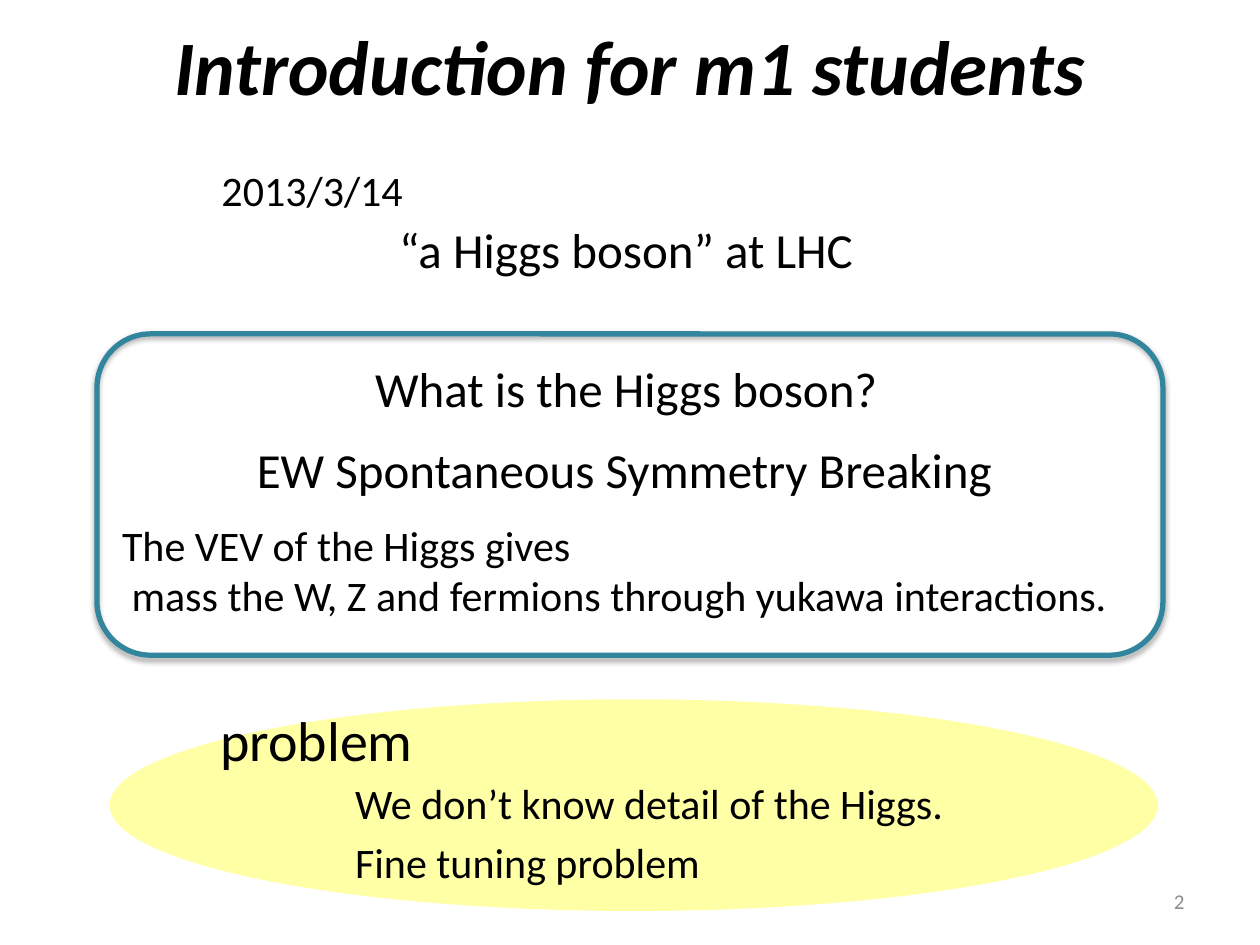
import dataclasses

import lxml.etree
import pptx
import pptx.dml.color
import pptx.enum.shapes
import pptx.enum.text
import pptx.oxml.ns
import pptx.util

ALIGN = pptx.enum.text.PP_ALIGN
ANCHOR = pptx.enum.text.MSO_ANCHOR
SHAPE = pptx.enum.shapes.MSO_SHAPE
COLUMNS, ROWS = 100, 75


@dataclasses.dataclass(frozen=True)
class Theme:
    font: str = "Calibri"
    ink: str = "000000"
    muted: str = "8C8C8C"
    frame: str = "31859C"
    highlight: str = "FFFF00"
    title: int = 44
    heading: int = 32
    statement: int = 28
    body: int = 24
    number: int = 12


THEME = Theme()


def rgb(value):
    return pptx.dml.color.RGBColor.from_string(value)


def grid_box(prs, column, row, columns, rows):
    dx, dy = prs.slide_width / COLUMNS, prs.slide_height / ROWS
    return [round(n) for n in (column * dx, row * dy, columns * dx, rows * dy)]


def style_text(tf, size, color=THEME.ink, align=ALIGN.LEFT, emphasis=None):
    for p in tf.paragraphs:
        p.alignment = align
        for r in p.runs:
            r.font.name = THEME.font
            r.font.size = pptx.util.Pt(size)
            r.font.color.rgb = rgb(color)
            r.font.bold = r.font.italic = emphasis


def set_title(prs, s, text, box):
    title = s.shapes.title
    title.left, title.top, title.width, title.height = grid_box(prs, *box)
    tf = title.text_frame
    tf.text = text
    tf.vertical_anchor = ANCHOR.MIDDLE
    style_text(tf, THEME.title, align=ALIGN.CENTER, emphasis=True)


def add_label(prs, s, text, size, box):
    tf = s.shapes.add_textbox(*grid_box(prs, *box)).text_frame
    tf.text = text
    tf.word_wrap = False
    tf.auto_size = pptx.enum.text.MSO_AUTO_SIZE.SHAPE_TO_FIT_TEXT
    style_text(tf, size)


def add_page_number(prs, s, text, box):
    tf = s.shapes.add_textbox(*grid_box(prs, *box)).text_frame
    tf.text = text
    tf.word_wrap = True
    tf.vertical_anchor = ANCHOR.MIDDLE
    style_text(tf, THEME.number, THEME.muted, ALIGN.RIGHT)


def add_highlight(prs, s, box, opacity):
    sp = s.shapes.add_shape(SHAPE.OVAL, *grid_box(prs, *box))
    sp.shadow.inherit = False
    sp.line.fill.background()
    sp.fill.solid()
    sp.fill.fore_color.rgb = rgb(THEME.highlight)
    color = sp.fill._xPr.find(".//" + pptx.oxml.ns.qn("a:srgbClr"))
    add_child(color, "alpha", val=opacity * 1000)


def add_child(parent, tag, **attributes):
    values = {name: str(value) for name, value in attributes.items()}
    return lxml.etree.SubElement(parent, pptx.oxml.ns.qn("a:" + tag), values)


def add_frame(prs, s, box):
    sp = s.shapes.add_shape(SHAPE.ROUNDED_RECTANGLE, *grid_box(prs, *box))
    sp.fill.background()
    sp.line.color.rgb = rgb(THEME.frame)
    sp.line.width = pptx.util.Pt(3)
    sp.shadow.inherit = False
    effects = sp._element.spPr.find(pptx.oxml.ns.qn("a:effectLst"))
    shadow = add_child(effects, "outerShdw", blurRad=pptx.util.Pt(3.1),
                       dist=pptx.util.Pt(1.8), dir=90 * 60000, rotWithShape=0)
    add_child(add_child(shadow, "srgbClr", val=THEME.ink), "alpha", val=35000)


def main():
    prs = pptx.Presentation()
    prs.slide_width = pptx.util.Inches(10)
    prs.slide_height = pptx.util.Inches(7.5)
    s = prs.slides.add_slide(prs.slide_layouts[5])

    add_highlight(prs, s, (8.7, 55.5, 83.2, 16.8), 35)
    set_title(prs, s, "Introduction for m1 students", (5, 0.6, 90, 9))
    add_page_number(prs, s, "2", (71.7, 69.5, 23.3, 4))

    labels = [
        ("2013/3/14", THEME.body, (16.6, 12.6, 16.6, 5)),
        ("“a Higgs boson” at LHC", THEME.statement, (30.7, 16.9, 38.5, 5.7)),
        ("What is the Higgs boson?", THEME.statement, (28.8, 28, 42.4, 5.7)),
        ("EW Spontaneous Symmetry Breaking", THEME.statement, (19.4, 34.4, 61.2, 5.7)),
        ("The VEV of the Higgs gives\n"
         " mass the W, Z and fermions through yukawa interactions.",
         THEME.body, (8.7, 40.7, 82.5, 9.1)),
        ("problem", THEME.heading, (16.5, 55.5, 17.5, 6.4)),
        ("We don’t know detail of the Higgs.", THEME.body, (27.2, 61.2, 49.3, 5)),
        ("Fine tuning problem", THEME.body, (27.2, 65.9, 29.7, 5)),
    ]
    for text, size, box in labels:
        add_label(prs, s, text, size, box)
    add_frame(prs, s, (7.7, 26.5, 84.6, 25.5))

    prs.save("out.pptx")


if __name__ == "__main__":
    main()
